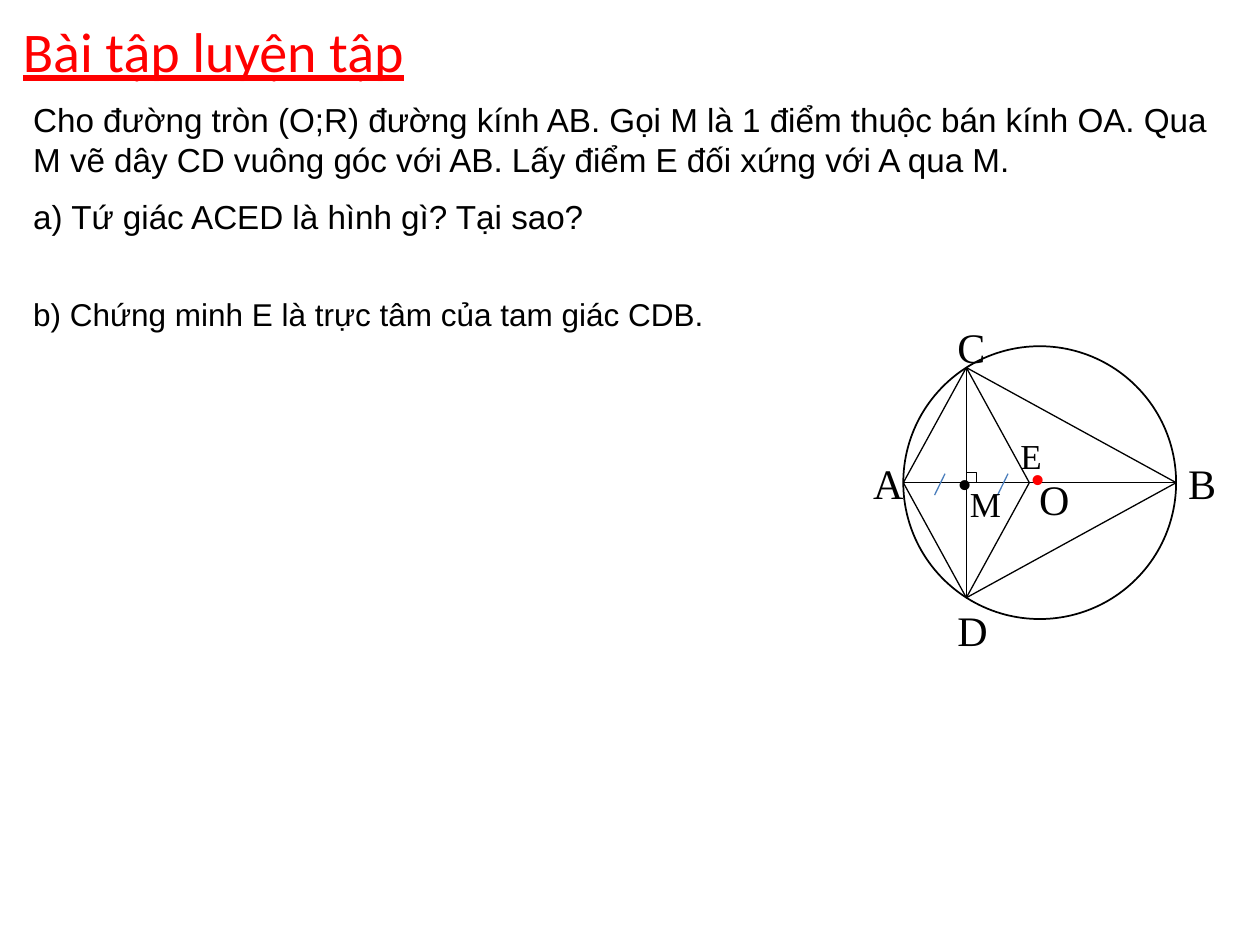
from lxml import etree
from pptx import Presentation
from pptx import util as u
from pptx.dml.color import RGBColor
from pptx.enum import shapes, text
from pptx.oxml.ns import qn

BLACK = RGBColor(0x00, 0x00, 0x00)
WHITE = RGBColor(0xFF, 0xFF, 0xFF)
RED = RGBColor(0xFF, 0x00, 0x00)
BLUE = RGBColor(0x4B, 0x7E, 0xBC)
SERIF = "Times New Roman"

TITLE = "Bài tập luyện tập"
PROBLEM = [
    "Cho đường tròn (O;R) đường kính AB. Gọi M là 1 điểm thuộc bán kính OA. "
    "Qua M vẽ dây CD vuông góc với AB. Lấy điểm E đối xứng với A qua M.",
    "a) Tứ giác ACED là hình gì? Tại sao?",
]
PART_B = "b) Chứng minh E là trực tâm của tam giác CDB."

RADIUS = 2.75
OX, OY = 20.96, 9.73
MX, HALF_CHORD = 19.48, 2.32
AX = OX - RADIUS
POINTS = {
    "A": (AX, OY),
    "B": (OX + RADIUS, OY),
    "C": (MX, OY - HALF_CHORD),
    "D": (MX, OY + HALF_CHORD),
    "E": (2 * MX - AX, OY),
}
SEGMENTS = ["AB", "CD", "CB", "CE", "AD", "BD", "CA", "ED"]
TICKS = [19.05, 20.32]
LABELS = [
    ("A", 17.35, 9.09, 0.84, 24, BLACK),
    ("B", 23.7, 9.09, 1.27, 24, BLACK),
    ("C", 19.05, 6.35, 0.84, 24, BLACK),
    ("D", 19.05, 12.07, 0.84, 24, BLACK),
    ("M", 19.3, 9.6, 0.84, 20, BLACK),
    ("E", 20.32, 8.64, 0.84, 20, BLACK),
    ("O", 20.7, 9.42, 1.14, 24, BLACK),
    ("•", 19.05, 9.09, 0.84, 24, BLACK),
    ("•", 20.52, 9.32, 0.84, 24, RED),
]

prs = Presentation()
prs.slide_width, prs.slide_height = u.Cm(25.4), u.Cm(19.05)
s = prs.slides.add_slide(prs.slide_layouts[6])


def add_run(p, words, font, size, color):
    r = p.add_run()
    r.text = words
    r.font.name = font
    r.font.size = u.Pt(size)
    r.font.color.rgb = color
    return r


def add_text(words, x, y, w, h, font, size, color):
    sp = s.shapes.add_textbox(u.Cm(x), u.Cm(y), u.Cm(w), u.Cm(h))
    sp.text_frame.word_wrap = True
    p = sp.text_frame.paragraphs[0]
    return p, add_run(p, words, font, size, color)


def add_shape(kind, x, y, w, h, line_color, width):
    sp = s.shapes.add_shape(kind, u.Cm(x), u.Cm(y), u.Cm(w), u.Cm(h))
    sp.shadow.inherit = False
    sp.fill.background()
    sp.line.color.rgb = line_color
    sp.line.width = u.Pt(width)
    return sp


def add_line(start, end, color):
    ends = [u.Cm(v) for v in (*start, *end)]
    c = s.shapes.add_connector(shapes.MSO_CONNECTOR.STRAIGHT, *ends)
    c.line.color.rgb = color
    c.line.width = u.Pt(0.75)
    etree.SubElement(c._element.spPr, qn("a:effectLst"))


RECT = shapes.MSO_SHAPE.RECTANGLE
sp = add_shape(RECT, 0.42, 1.88, 24.34, 4.32, WHITE, 0.75)
sp.fill.solid()
sp.fill.fore_color.rgb = WHITE
tf = sp.text_frame
tf.word_wrap = True
tf.vertical_anchor = text.MSO_ANCHOR.TOP
for i, words in enumerate(PROBLEM):
    p = tf.add_paragraph() if i else tf.paragraphs[0]
    p.alignment = text.PP_ALIGN.LEFT
    p.space_before = u.Pt(10 * i)
    add_run(p, words, "Arial", 19, BLACK)

p, r = add_text(TITLE, 0.21, 0.21, 12.5, 1.62, "Calibri", 32, RED)
r.font.underline = True

add_shape(shapes.MSO_SHAPE.OVAL, AX, OY - RADIUS, 2 * RADIUS, 2 * RADIUS, BLACK, 1)
for start, end in SEGMENTS:
    add_line(POINTS[start], POINTS[end], BLACK)
add_shape(RECT, MX, OY - 0.21, 0.21, 0.21, BLACK, 0.75)
for x in TICKS:
    add_line((x, OY - 0.18), (x - 0.21, OY + 0.25), BLUE)

for name, x, y, w, size, color in LABELS:
    p, r = add_text(name, x, y, w, 1.27, SERIF, size, color)
    if color == RED:
        p.line_spacing = 0.65

add_text(PART_B, 0.42, 5.82, 20.32, 1.8, "Arial", 18, BLACK)

prs.save("out.pptx")
